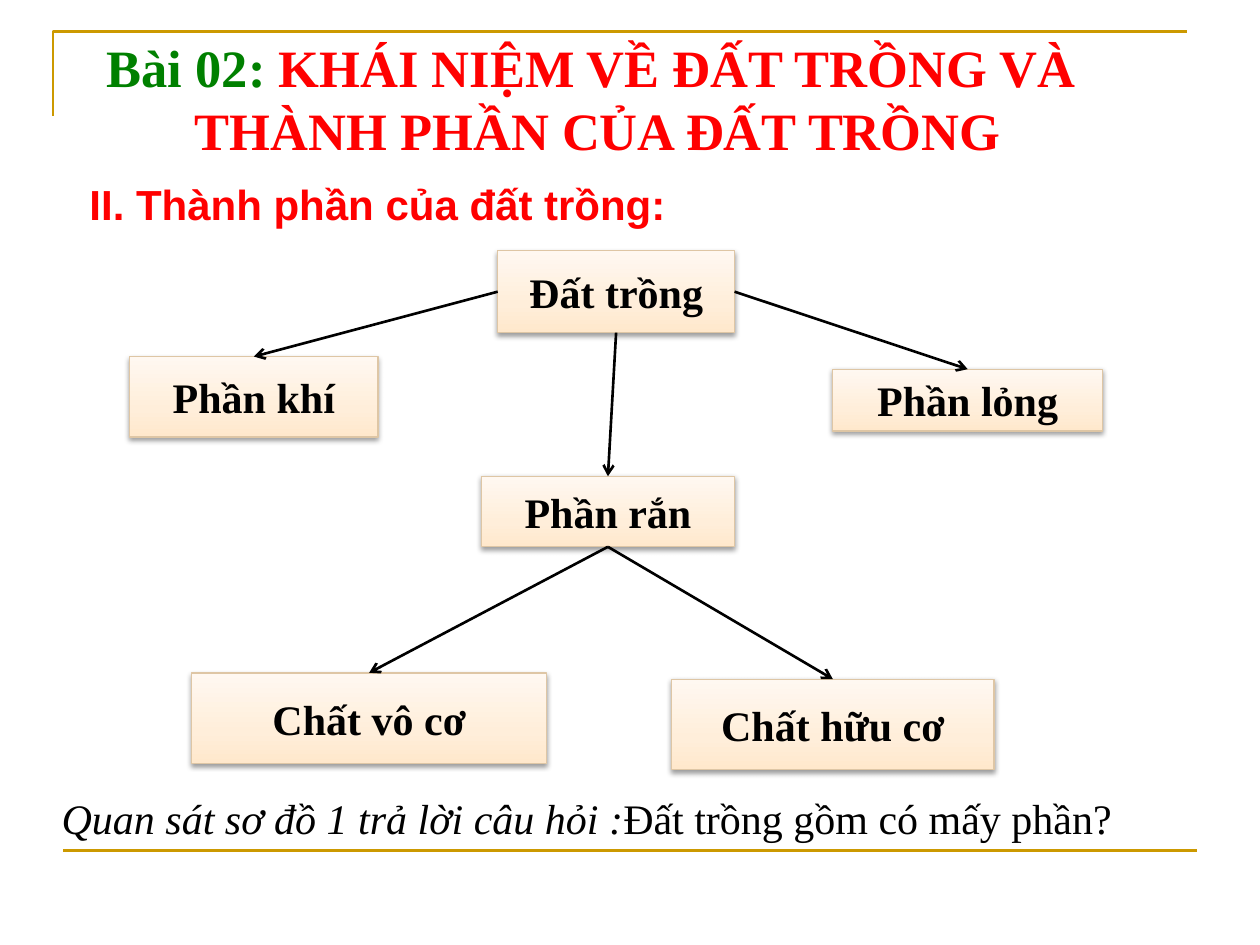
from copy import deepcopy
from lxml import etree
from pptx import Presentation
from pptx.dml.color import RGBColor as RGB
from pptx.enum.shapes import MSO_CONNECTOR as LINK, MSO_SHAPE as SHAPE
from pptx.enum.text import MSO_ANCHOR as ANCHOR, MSO_AUTO_SIZE as FIT, PP_ALIGN as ALIGN
from pptx.oxml import parse_xml
from pptx.oxml.ns import nsdecls, qn
from pptx.util import Inches, Pt

GOLD = RGB(0xCC, 0x99, 0x00)
RED = RGB(0xFF, 0x00, 0x00)
GREEN = RGB(0x00, 0x80, 0x00)
BLACK = RGB(0x00, 0x00, 0x00)
EDGE = RGB(0xDE, 0xC6, 0xA5)
CREAM = [(0, RGB(0xFF, 0xE8, 0xCC)), (0.35, RGB(0xFF, 0xEE, 0xDA)),
         (1, RGB(0xFF, 0xF8, 0xF1))]
SERIF, SANS = "Times New Roman", "Arial"
TOP, LEFT, BOTTOM, RIGHT = range(4)

NODES = {
    "Đất trồng": (3.95, 1.99, 1.88, 0.65),
    "Phần rắn": (3.82, 3.78, 2.01, 0.56),
    "Phần khí": (1.03, 2.83, 1.97, 0.64),
    "Phần lỏng": (6.61, 2.93, 2.14, 0.49),
    "Chất vô cơ": (1.52, 5.34, 2.82, 0.72),
    "Chất hữu cơ": (5.33, 5.39, 2.56, 0.72),
}
LINKS = [
    ("Đất trồng", LEFT, "Phần khí"),
    ("Đất trồng", BOTTOM, "Phần rắn"),
    ("Đất trồng", RIGHT, "Phần lỏng"),
    ("Phần rắn", BOTTOM, "Chất vô cơ"),
    ("Phần rắn", BOTTOM, "Chất hữu cơ"),
]


def inches(box):
    return [Inches(v) for v in box]


def set_font(font, name, size, color, bold=False):
    font.name, font.size, font.bold = name, Pt(size), bold
    font.color.rgb = color


def add_line(slide, ends, color):
    line = slide.shapes.add_connector(LINK.STRAIGHT, *inches(ends))
    line.line.color.rgb = color
    line.line.width = Pt(1.5)
    etree.SubElement(line._element.spPr, qn("a:effectLst"))
    return line


def add_frame(slide, box):
    """Gold corner at the top left and gold rule at the foot."""
    x, y, w, h = box
    pen = slide.shapes.build_freeform(Inches(x), Inches(y + h))
    pen.add_line_segments([inches((x, y)), inches((x + w, y))], close=False)
    corner = pen.convert_to_shape()
    corner.fill.background()
    corner.line.color.rgb = GOLD
    corner.line.width = Pt(1.5)
    corner.shadow.inherit = False
    add_line(slide, (0.5, 6.75, 9.5, 6.75), GOLD)


def add_title(slide, box):
    title = slide.shapes.title
    title.left, title.top, title.width, title.height = inches(box)
    frame = title.text_frame
    frame.auto_size, frame.vertical_anchor = FIT.NONE, ANCHOR.TOP
    first, second = frame.paragraphs[0], frame.add_paragraph()
    first.add_run().text = "Bài 02: "
    first.add_run().text = "KHÁI NIỆM VỀ ĐẤT TRỒNG VÀ "
    second.add_run().text = "THÀNH PHẦN CỦA ĐẤT TRỒNG"
    for para in (first, second):
        para.alignment = ALIGN.CENTER
        para.space_before = Pt(0)
        set_font(para.font, SERIF, 30, RED, True)
    first.runs[0].font.color.rgb = GREEN


def add_text(slide, box, parts, font, color, bold=False):
    """Text box with one paragraph; parts are (text, italic) pairs."""
    frame = slide.shapes.add_textbox(*inches(box)).text_frame
    frame.word_wrap, frame.auto_size = True, FIT.SHAPE_TO_FIT_TEXT
    para = frame.paragraphs[0]
    set_font(para.font, font, 24, color, bold)
    for text, italic in parts:
        run = para.add_run()
        run.text, run.font.italic = text, italic
    return frame


def add_heading(slide, box):
    frame = add_text(slide, box, [("II. Thành phần của đất trồng:", False)],
                     SANS, RED, True)
    frame.margin_left = frame.margin_right = Inches(0.14)
    frame.margin_top = frame.margin_bottom = Inches(0.07)


def add_node(slide, text, box):
    node = slide.shapes.add_shape(SHAPE.RECTANGLE, *inches(box))
    node.fill.gradient()
    node.fill.gradient_angle = 90
    stops = node._element.spPr.find(".//" + qn("a:gsLst"))
    stops.insert(1, deepcopy(stops[0]))
    for stop, (place, color) in zip(node.fill.gradient_stops, CREAM):
        stop.position, stop.color.rgb = place, color
    node.line.color.rgb = EDGE
    node.line.width = Pt(0.75)
    node.shadow.inherit = False
    node._element.spPr.find(qn("a:effectLst")).append(parse_xml(
        f'<a:outerShdw {nsdecls("a")} blurRad="{Pt(3.1)}" dist="{Pt(1.6)}" '
        'dir="5400000" rotWithShape="0"><a:srgbClr val="000000">'
        '<a:alpha val="38000"/></a:srgbClr></a:outerShdw>'))
    frame = node.text_frame
    frame.text, frame.vertical_anchor = text, ANCHOR.MIDDLE
    para = frame.paragraphs[0]
    para.alignment = ALIGN.CENTER
    set_font(para.font, SERIF, 24, BLACK, True)
    return node


def add_tree(slide):
    nodes = {text: add_node(slide, text, box) for text, box in NODES.items()}
    for start, side, end in LINKS:
        arrow = add_line(slide, (0, 0, 1, 1), BLACK)
        arrow.begin_connect(nodes[start], side)
        arrow.end_connect(nodes[end], TOP)
        etree.SubElement(arrow.line._get_or_add_ln(), qn("a:tailEnd"), type="arrow")


def main():
    deck = Presentation()
    deck.slide_width, deck.slide_height = Inches(10), Inches(7.5)
    slide = deck.slides.add_slide(deck.slide_layouts[5])
    add_frame(slide, (0.42, 0.25, 9, 0.67))
    add_title(slide, (0.49, 0.23, 8.51, 1.11))
    add_heading(slide, (0.57, 1.35, 9.45, 0.55))
    add_tree(slide)
    add_text(slide, (0.39, 6.24, 9.38, 0.5),
             [("Quan sát sơ đồ 1 trả lời câu hỏi :", True),
              ("Đất trồng gồm có mấy phần?", False)], SERIF, BLACK)
    deck.save("out.pptx")


if __name__ == "__main__":
    main()
